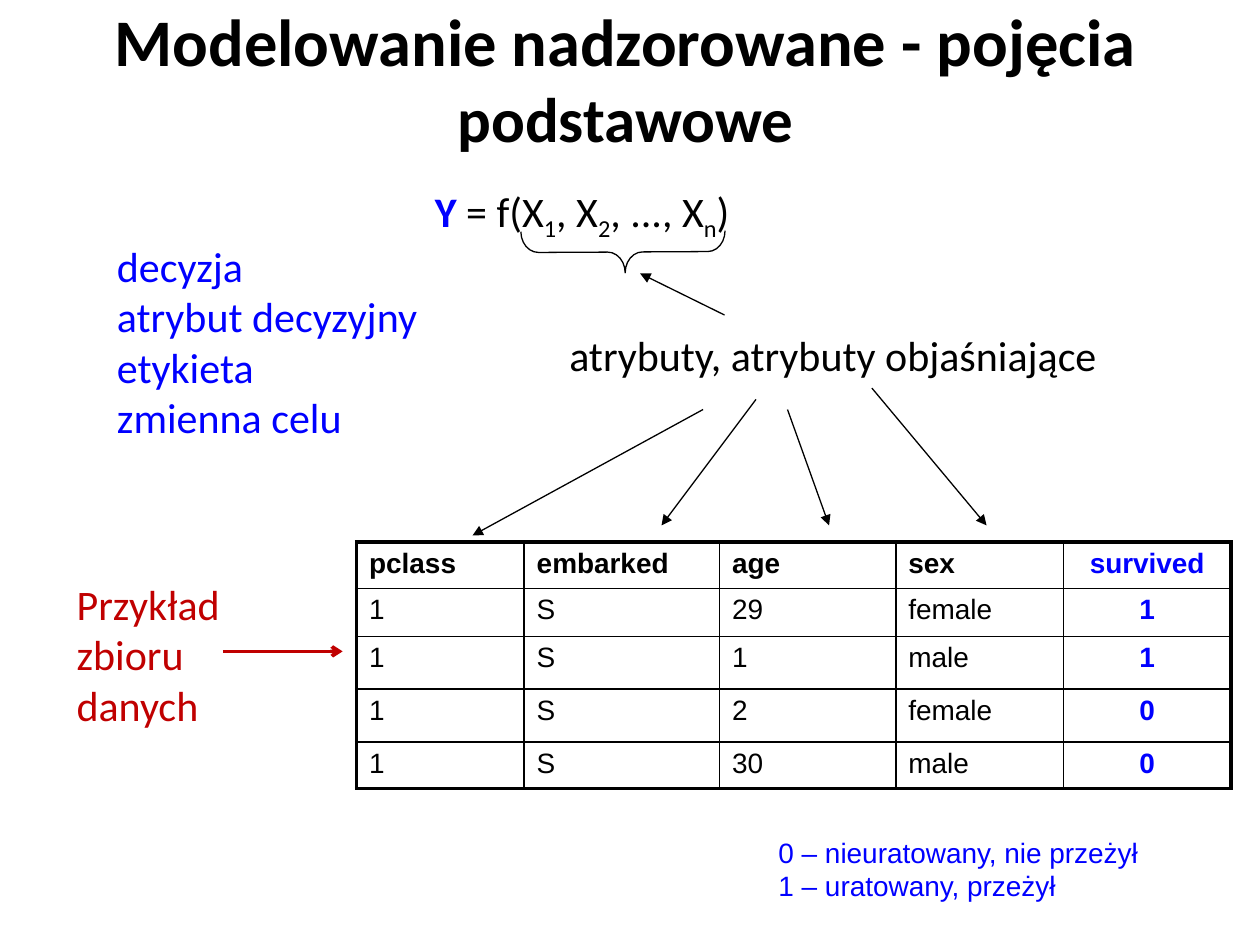
import pptx
import pptx.dml.color
import pptx.enum.shapes
import pptx.enum.text
import pptx.oxml
import pptx.oxml.ns
import pptx.util
from dataclasses import dataclass

Inches = pptx.util.Inches
Pt = pptx.util.Pt
Align = pptx.enum.text.PP_ALIGN
Anchor = pptx.enum.text.MSO_ANCHOR


@dataclass(frozen=True)
class Theme:
    black: str = "000000"
    blue: str = "0000FF"
    red: str = "C00000"
    heading_font: str = "Calibri"
    data_font: str = "Arial"
    title: int = 38
    title_end: int = 36
    body: int = 24
    data: int = 16
    thin: float = 0.75
    grid: float = 1
    frame: float = 2.25
    pointer: float = 2


THEME = Theme()

TITLE = [("Modelowanie nadzorowane - pojęcia ", THEME.title), ("podstawowe", THEME.title_end)]
FORMULA = [("Y", False), (" = f(X", False), ("1", True), (", X", False), ("2", True),
           (", ..., X", False), ("n", True), (")", False)]
LABELS = [
    ((6.08, 6.58, 3.09, 0.64), "0 – nieuratowany, nie przeżył\n1 – uratowany, przeżył",
     THEME.data_font, THEME.data, THEME.blue, False),
    ((0.83, 1.86, 2.62, 1.72), "decyzja\natrybut decyzyjny\netykieta\nzmienna celu",
     THEME.heading_font, THEME.body, THEME.blue, False),
    ((4.42, 2.57, 4.43, 0.5), "atrybuty, atrybuty objaśniające",
     THEME.heading_font, THEME.body, THEME.black, False),
    ((0.51, 4.54, 1.74, 1.31), "Przykład zbioru danych",
     THEME.heading_font, THEME.body, THEME.red, True),
]
PASSENGERS = [
    ("pclass", "embarked", "age", "sex", "survived"),
    ("1", "S", "29", "female", "1"),
    ("1", "S", "1", "male", "1"),
    ("1", "S", "2", "female", "0"),
    ("1", "S", "30", "male", "0"),
]
TABLE_ORIGIN = (2.83, 4.3)
COLUMN_WIDTHS = [1.33, 1.55, 1.4, 1.33, 1.33]
ROW_HEIGHTS = [0.37, 0.38, 0.42, 0.42, 0.35]
ATTRIBUTE_ARROWS = [
    ((5.58, 3.25), (3.75, 4.25)),
    ((6, 3.17), (5.25, 4.17)),
    ((6.25, 3.25), (6.58, 4.17)),
    ((6.92, 3.08), (7.83, 4.17)),
    ((5.75, 2.5), (5.08, 2.17)),
]
DATASET_ARROW = ((1.77, 5.17), (2.72, 5.17))


def color(value):
    return pptx.dml.color.RGBColor.from_string(value)


def style(span, font, size, ink, bold=False):
    span.font.name = font
    span.font.size = Pt(size)
    span.font.color.rgb = color(ink)
    span.font.bold = bold


def add_box(page, place, wrap=True):
    box = page.shapes.add_textbox(*map(Inches, place))
    box.text_frame.word_wrap = wrap
    return box


def add_span(para, text):
    span = para.add_run()
    span.text = text
    return span


def add_title(page):
    box = add_box(page, (-0.51, 0.05, 10.95, 1.13))
    box.text_frame.vertical_anchor = Anchor.MIDDLE
    para = box.text_frame.paragraphs[0]
    para.alignment = Align.CENTER
    for text, size in TITLE:
        style(add_span(para, text), THEME.heading_font, size, THEME.black, True)


def add_formula(page):
    para = add_box(page, (0.83, 1.42, 7.58, 0.67)).text_frame.paragraphs[0]
    para.alignment = Align.CENTER
    for index, (text, subscript) in enumerate(FORMULA):
        span = add_span(para, text)
        target = index == 0
        style(span, THEME.heading_font, THEME.body, THEME.blue if target else THEME.black, target)
        if subscript:
            span.font._element.set("baseline", "-25000")


def add_label(page, place, text, font, size, ink, wrap):
    frame = add_box(page, place, wrap).text_frame
    frame.auto_size = pptx.enum.text.MSO_AUTO_SIZE.SHAPE_TO_FIT_TEXT
    frame.text = text
    for para in frame.paragraphs:
        style(para.runs[0], font, size, ink)


def set_borders(cell, outer):
    properties = cell._tc.get_or_add_tcPr()
    for side in "LRTB":
        width = Pt(THEME.frame if side in outer else THEME.grid)
        properties.append(pptx.oxml.parse_xml(
            f'<a:ln{side} {pptx.oxml.ns.nsdecls("a")} w="{width}"><a:solidFill>'
            f'<a:srgbClr val="{THEME.black}"/></a:solidFill></a:ln{side}>'))


def add_passengers(page):
    last_row, last_column = len(ROW_HEIGHTS) - 1, len(COLUMN_WIDTHS) - 1
    place = (*TABLE_ORIGIN, sum(COLUMN_WIDTHS), sum(ROW_HEIGHTS))
    table = page.shapes.add_table(last_row + 1, last_column + 1, *map(Inches, place)).table
    table.first_row = table.horz_banding = False
    for column, width in zip(table.columns, COLUMN_WIDTHS):
        column.width = Inches(width)
    for row, height in zip(table.rows, ROW_HEIGHTS):
        row.height = Inches(height)
    for r, values in enumerate(PASSENGERS):
        for c, value in enumerate(values):
            cell = table.cell(r, c)
            target = c == last_column
            cell.text_frame.text = value
            para = cell.text_frame.paragraphs[0]
            para.alignment = Align.CENTER if target else Align.LEFT
            style(para.runs[0], THEME.data_font, THEME.data,
                  THEME.blue if target else THEME.black, target or r == 0)
            edges = {"L": c == 0, "R": target, "T": r == 0, "B": r == last_row}
            set_borders(cell, [side for side, on_edge in edges.items() if on_edge])
            cell.fill.background()


def add_arrow(page, start, end, ink, width, head):
    arrow = page.shapes.add_connector(pptx.enum.shapes.MSO_CONNECTOR.STRAIGHT,
                                      *map(Inches, (*start, *end)))
    arrow.line.color.rgb = color(ink)
    arrow.line.width = Pt(width)
    namespace = pptx.oxml.ns.nsdecls("a")
    arrow.line._get_or_add_ln().append(
        pptx.oxml.parse_xml(f'<a:tailEnd {namespace} type="{head}"/>'))
    arrow._element.spPr.append(pptx.oxml.parse_xml(f"<a:effectLst {namespace}/>"))


def add_brace(page):
    brace = page.shapes.add_shape(pptx.enum.shapes.MSO_SHAPE.LEFT_BRACE,
                                  *map(Inches, (4.78, 1.19, 0.33, 1.62)))
    brace.adjustments[0] = 0.42
    brace.adjustments[1] = 0.51
    brace.rotation = 269.7
    brace.shadow.inherit = False
    brace.fill.background()
    brace.line.color.rgb = color(THEME.black)
    brace.line.width = Pt(THEME.thin)


def main():
    deck = pptx.Presentation()
    deck.slide_width, deck.slide_height = Inches(10), Inches(7.5)
    page = deck.slides.add_slide(deck.slide_layouts[6])
    add_title(page)
    add_formula(page)
    add_passengers(page)
    for label in LABELS:
        add_label(page, *label)
    for start, end in ATTRIBUTE_ARROWS:
        add_arrow(page, start, end, THEME.black, THEME.thin, "triangle")
    add_brace(page)
    add_arrow(page, *DATASET_ARROW, THEME.red, THEME.pointer, "arrow")
    deck.save("out.pptx")


if __name__ == "__main__":
    main()
